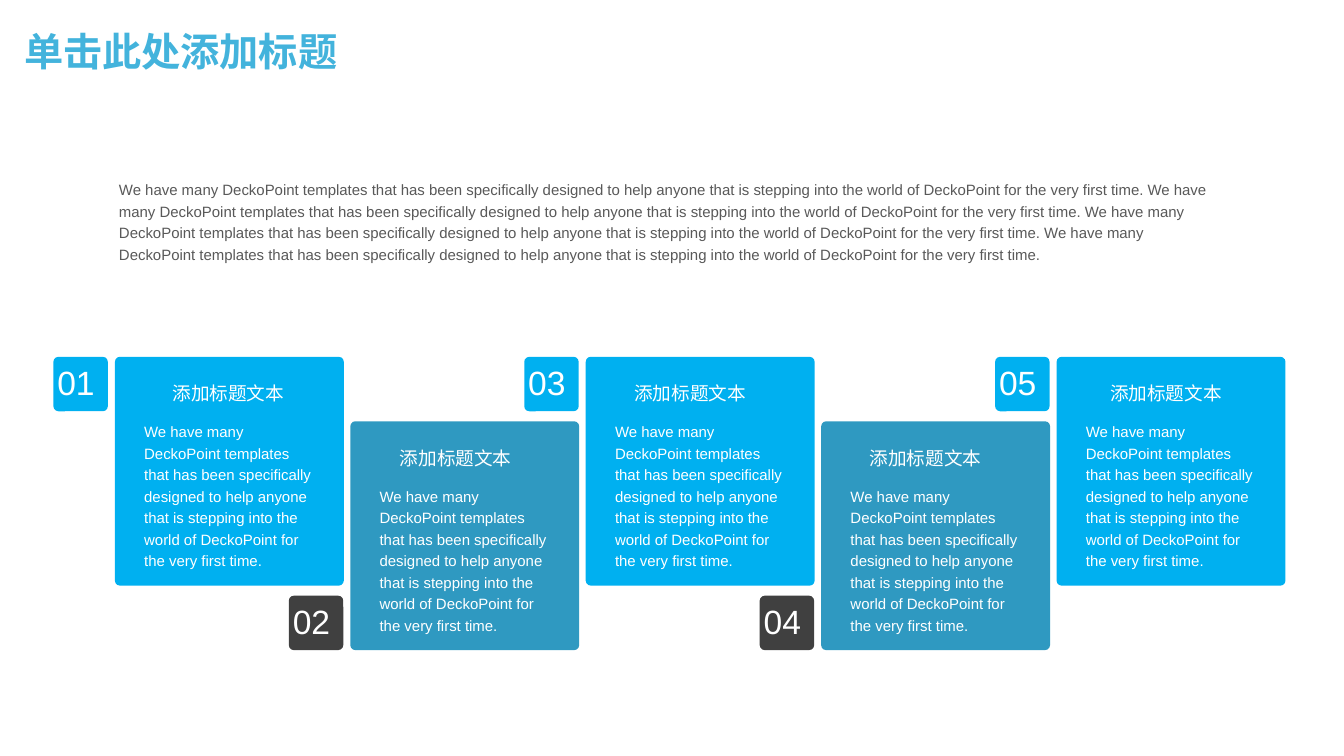
from pptx import Presentation
from pptx import util as u
from pptx.dml.color import RGBColor
from pptx.enum import shapes, text
from pptx.oxml.ns import qn
from lxml import etree

SKY = RGBColor(0x00, 0xB0, 0xF0)
STEEL = RGBColor(0x2F, 0x99, 0xC1)
DARK = RGBColor(0x40, 0x40, 0x40)
GREY = RGBColor(0x59, 0x59, 0x59)
AZURE = RGBColor(0x43, 0xB3, 0xDC)
WHITE = RGBColor(0xFF, 0xFF, 0xFF)
HAN = "Noto Sans CJK SC"
COPY = ("We have many DeckoPoint templates that has been specifically designed "
        "to help anyone that is stepping into the world of DeckoPoint for the "
        "very first time.")

deck = Presentation()
deck.slide_width = u.Inches(13.33)
deck.slide_height = u.Inches(7.5)
slide = deck.slides.add_slide(deck.slide_layouts[6])


def add_tile(left, top, size, color):
    tile = slide.shapes.add_shape(
        shapes.MSO_SHAPE.ROUNDED_RECTANGLE,
        u.Inches(left), u.Inches(top), u.Inches(size), u.Inches(size))
    tile.adjustments[0] = 0.05 / size
    tile.shadow.inherit = False
    tile.fill.solid()
    tile.fill.fore_color.rgb = color
    tile.line.fill.background()


def add_text(words, left, top, width, height, size, color,
             font="Arial", pad=True, wrap=True, space=1.0):
    box = slide.shapes.add_textbox(
        u.Inches(left), u.Inches(top), u.Inches(width), u.Inches(height))
    frame = box.text_frame
    frame.text = words
    frame.word_wrap = wrap
    if not pad:
        frame.margin_left = frame.margin_right = 0
        frame.margin_top = frame.margin_bottom = 0
    line = frame.paragraphs[0]
    line.line_spacing = space
    run = line.runs[0]
    run.font.size = u.Pt(size)
    run.font.name = font
    run.font.color.rgb = color
    if font != "Arial":
        east = etree.SubElement(run.font._element, qn("a:ea"))
        east.set("typeface", HAN)
    return frame


title = add_text("单击此处添加标题", 0.14, 0.14, 11.5, 0.79, 28, AZURE,
                 font="Montserrat", space=0.9)
title.vertical_anchor = text.MSO_ANCHOR.MIDDLE
title.paragraphs[0].runs[0].font.bold = True

add_text(" ".join([COPY] * 4), 1.18, 1.76, 10.92, 0.86, 10.7, GREY,
         pad=False, space=1.2)

PITCH = (10.48 - 1.14) / 4
for i, shift in enumerate([0.46, 0.38, 0.37, 0.37, 0.42]):
    left = 1.14 + i * PITCH
    low = i % 2 == 1
    top = 4.18 if low else 3.54
    mark = 5.91 if low else 3.54

    add_tile(left, top, 2.27, STEEL if low else SKY)
    add_tile(left - 0.61, mark, 0.54, DARK if low else SKY)
    add_text(f"{i + 1:02}", left - 0.67, mark, 0.58, 0.5, 24, WHITE, wrap=False)
    add_text(COPY, left + 0.29, top + 0.62, 1.68, 1.51, 10.7, WHITE,
             pad=False, space=1.2)
    head = add_text("添加标题文本", left + shift, top + 0.16, 1.33, 0.37, 13.3,
                    WHITE, font=HAN, wrap=False, space=1.2)
    head.paragraphs[0].alignment = text.PP_ALIGN.CENTER

deck.save("out.pptx")
